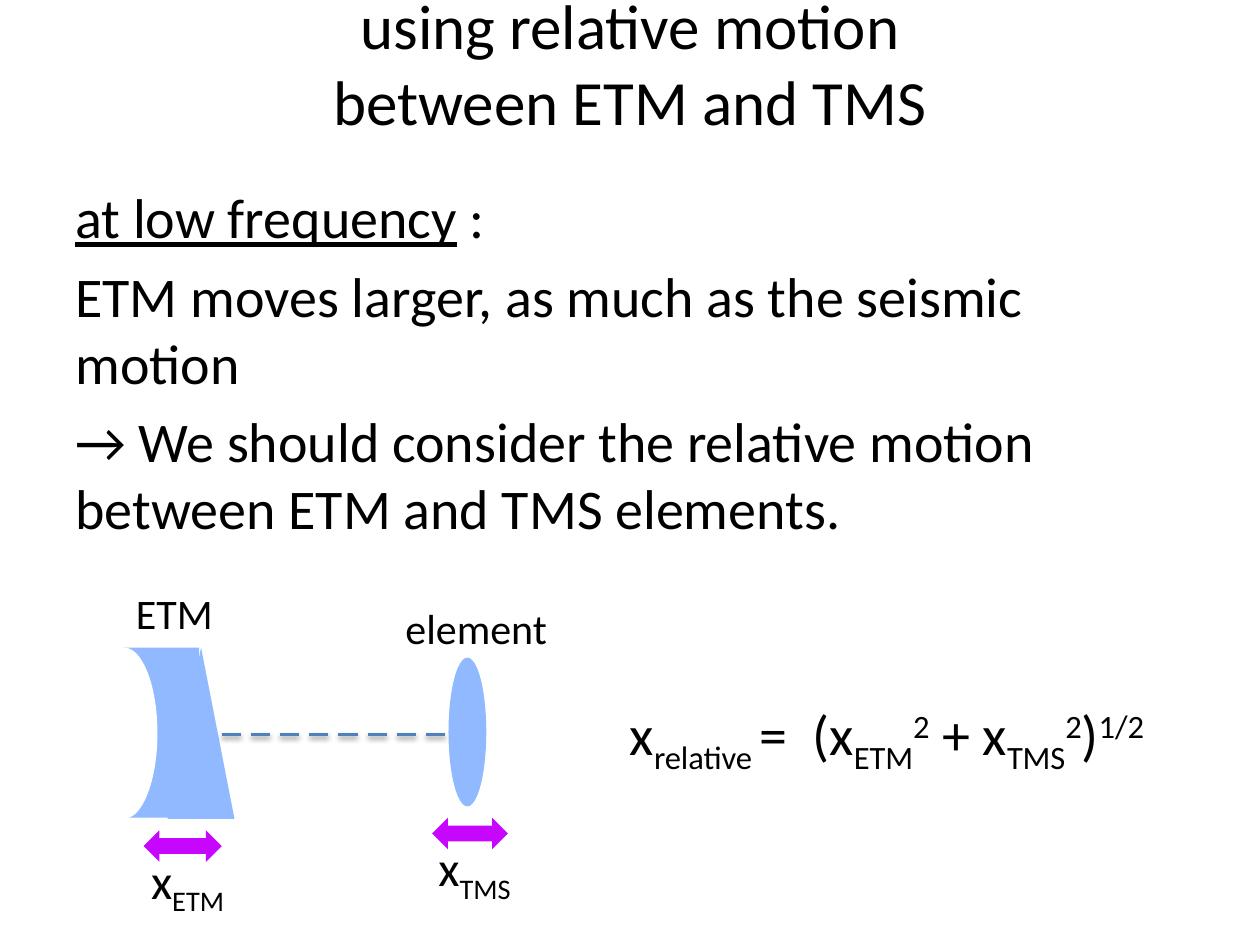
from dataclasses import dataclass

from lxml import etree
from pptx import Presentation
from pptx import util as u
from pptx.dml import color
from pptx.enum import shapes, text
from pptx.oxml import ns


@dataclass(frozen=True)
class Theme:
    font: str = "Calibri"
    ink: str = "000000"
    paper: str = "FFFFFF"
    optic: str = "91B9FF"
    motion: str = "C606FD"
    beam: str = "4F81BD"
    title: int = 36
    body: int = 32
    symbol: int = 28
    label: int = 24


THEME = Theme()
SUBSCRIPT = {"baseline": "-25000"}
SUPERSCRIPT = {"baseline": "30000"}
UNDERLINE = {"u": "sng"}


def rgb(value):
    return color.RGBColor.from_string(value)


def apply(target, values):
    for name, value in values.items():
        setattr(target, name, value)


def place(box, left, top, width, height):
    return [u.Pt(n) for n in (box[0] + left, box[1] + top, width, height)]


def add_text(slide, frame, paragraphs, size, paragraph_format=None, **frame_format):
    text_frame = slide.shapes.add_textbox(*frame).text_frame
    apply(text_frame, {"word_wrap": True, **frame_format})
    for index, runs in enumerate(paragraphs):
        paragraph = text_frame.add_paragraph() if index else text_frame.paragraphs[0]
        apply(paragraph, paragraph_format or {})
        for content, attributes in runs:
            for number, line in enumerate(content.split("\n")):
                if number:
                    paragraph.add_line_break()
                run = paragraph.add_run()
                run.text = line
                apply(run.font, {"name": THEME.font, "size": u.Pt(size)})
                run.font.color.rgb = rgb(THEME.ink)
                for name, value in attributes.items():
                    run.font._element.set(name, value)


def add_label(slide, frame, runs, size):
    add_text(slide, frame, [runs], size, word_wrap=False,
             auto_size=text.MSO_AUTO_SIZE.SHAPE_TO_FIT_TEXT)


def add_solid(slide, kind, frame, fill):
    shape = slide.shapes.add_shape(kind, *frame)
    shape.shadow.inherit = False
    shape.fill.solid()
    shape.fill.fore_color.rgb = rgb(fill)
    shape.line.fill.background()
    return shape


def add_dash(slide, left, top, length):
    line = slide.shapes.add_connector(
        shapes.MSO_CONNECTOR.STRAIGHT, *[u.Pt(n) for n in (left, top, left + length, top)])
    line.line.width = u.Pt(2)
    line.line.color.rgb = rgb(THEME.beam)
    effects = etree.SubElement(line._element.spPr, ns.qn("a:effectLst"))
    shadow = etree.SubElement(
        effects, ns.qn("a:outerShdw"), blurRad=str(u.Pt(3.1)), dist=str(u.Pt(1.6)),
        dir="5400000", rotWithShape="0")
    tint = etree.SubElement(shadow, ns.qn("a:srgbClr"), val=THEME.ink)
    etree.SubElement(tint, ns.qn("a:alpha"), val="38000")


def add_title(slide, box):
    add_text(slide, place(box, 0, 0, 648, 90),
             [[("using relative motion\nbetween ETM and TMS", {})]], THEME.title,
             {"alignment": text.PP_ALIGN.CENTER},
             vertical_anchor=text.MSO_ANCHOR.MIDDLE)


def add_body(slide, box):
    paragraphs = [
        [("at low frequency", UNDERLINE), (" :", {})],
        [("ETM moves larger, as much as the seismic motion", {})],
        [("→ We should consider the relative motion between ETM and TMS elements.", {})],
    ]
    add_text(slide, place(box, 0, 0, 648, 356.4), paragraphs, THEME.body,
             {"space_before": u.Pt(6.4)})


def add_equation(slide, box):
    runs = [
        ("x", {}), ("relative ", SUBSCRIPT), ("=  (x", {}), ("ETM", SUBSCRIPT),
        ("2", SUPERSCRIPT), (" + x", {}), ("TMS", SUBSCRIPT), ("2", SUPERSCRIPT),
        (")", {}), ("1/2", SUPERSCRIPT),
    ]
    add_label(slide, place(box, 0, 0, 338.4, 46), runs, THEME.body)


def add_diagram(slide, box):
    kinds = shapes.MSO_SHAPE
    solids = [
        (kinds.ISOSCELES_TRIANGLE, (45.8, 40, 38.2, 97.9), THEME.optic),
        (kinds.RECTANGLE, (20.6, 40, 43.2, 97.2), THEME.optic),
        (kinds.OVAL, (1.8, 40, 38.2, 97.9), THEME.paper),
        (kinds.OVAL, (206.3, 45.8, 21.6, 85), THEME.optic),
        (kinds.LEFT_RIGHT_ARROW, (197, 137.3, 43.2, 18), THEME.motion),
        (kinds.LEFT_RIGHT_ARROW, (32.1, 144.5, 44.6, 18), THEME.motion),
    ]
    for kind, frame, fill in solids:
        add_solid(slide, kind, place(box, *frame), fill)

    labels = [
        ((20.6, 1.9, 59, 36), [("ETM", {})], THEME.label),
        ((174.6, 10.6, 96.5, 36), [("element", {})], THEME.label),
        ((29.2, 152.4, 61.2, 41), [("x", {}), ("ETM", SUBSCRIPT)], THEME.symbol),
        ((193.4, 145.2, 60.5, 41), [("x", {}), ("TMS", SUBSCRIPT)], THEME.symbol),
    ]
    for frame, runs, size in labels:
        add_label(slide, place(box, *frame), runs, size)

    for index in range(8):
        add_dash(slide, box[0] + 76.7 + index * 16.67, box[1] + 89.8, 11)


def main():
    presentation = Presentation()
    apply(presentation, {"slide_width": u.Pt(720), "slide_height": u.Pt(540)})
    slide = presentation.slides.add_slide(presentation.slide_layouts[6])
    add_body(slide, (36, 100.8))
    add_title(slide, (36, -9.4))
    add_equation(slide, (352.8, 396))
    add_diagram(slide, (50, 330))
    presentation.save("out.pptx")


if __name__ == "__main__":
    main()
